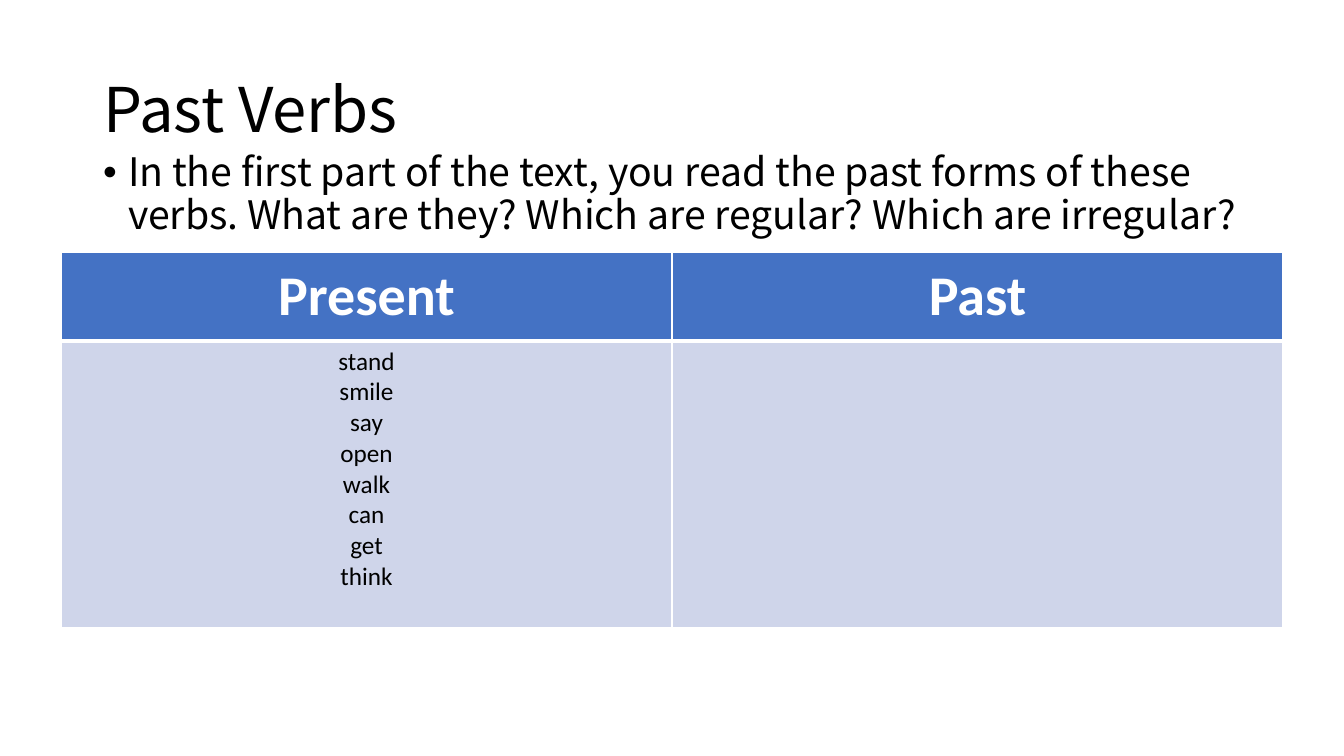
from dataclasses import dataclass

from lxml.etree import SubElement
from pptx import Presentation
from pptx.dml.color import RGBColor
from pptx.enum.text import MSO_ANCHOR, MSO_AUTO_SIZE, PP_ALIGN
from pptx.oxml.ns import qn
from pptx.util import Emu, Pt

TITLE = "Past Verbs"
QUESTION = (
    "In the first part of the text, you read the past forms of these verbs. "
    "What are they? Which are regular? Which are irregular?"
)
COLUMNS = [
    ("Present", ["stand", "smile", "say", "open", "walk", "can", "get", "think"]),
    ("Past", []),
]

PAGE_SIZE = (1344, 756)
TITLE_AREA = (93, 40, 1159, 146)
BODY_AREA = (93, 148, 1191, 480)
TABLE_CORNER = (61, 252)
COLUMN_WIDTH = 611
ROW_HEIGHTS = (89, 287)
BULLET_INDENT = 25


@dataclass(frozen=True)
class Theme:
    text_font: str = "Noto Sans CJK SC"
    table_font: str = "Calibri"
    ink: str = "000000"
    white: str = "FFFFFF"
    header_fill: str = "4472C4"
    body_fill: str = "CFD5EA"
    title_size: int = 44
    question_size: int = 28
    header_size: int = 40
    verb_size: int = 18
    line_spacing: float = 0.9
    thin: int = 1
    thick: int = 3


THEME = Theme()


def px(length):
    return Emu(round(length * 914400 / 100.8))


def add_span(para, text, font, size, color, bold=False):
    span = para.add_run()
    span.text = text
    span.font.name = font
    span.font.size = Pt(size)
    span.font.bold = bold
    span.font.color.rgb = RGBColor.from_string(color)


def fill_placeholder(box, area, text, size, anchor):
    box.left, box.top, box.width, box.height = map(px, area)
    frame = box.text_frame
    frame.word_wrap = True
    frame.auto_size = MSO_AUTO_SIZE.NONE
    frame.vertical_anchor = anchor
    para = frame.paragraphs[0]
    para.alignment = PP_ALIGN.LEFT
    para.line_spacing = THEME.line_spacing
    para.space_before = Pt(0)
    add_span(para, text, THEME.text_font, size, THEME.ink)
    return para


def add_bullet(para):
    properties = para._p.get_or_add_pPr()
    properties.set("marL", str(px(BULLET_INDENT)))
    properties.set("indent", str(-px(BULLET_INDENT)))
    SubElement(properties, qn("a:buChar"), char="•")


def style_cell(cell, fill, top, bottom):
    properties = cell._tc.get_or_add_tcPr()
    widths = {"lnL": THEME.thin, "lnR": THEME.thin, "lnT": top, "lnB": bottom}
    for side, width in widths.items():
        line = SubElement(properties, qn(f"a:{side}"), w=str(Pt(width)))
        paint = SubElement(line, qn("a:solidFill"))
        SubElement(paint, qn("a:srgbClr"), val=THEME.white)
    cell.fill.solid()
    cell.fill.fore_color.rgb = RGBColor.from_string(fill)


def fill_cell(cell, lines, size, color, bold):
    frame = cell.text_frame
    for number, text in enumerate(lines):
        para = frame.add_paragraph() if number else frame.paragraphs[0]
        para.alignment = PP_ALIGN.CENTER
        add_span(para, text, THEME.table_font, size, color, bold)


def add_verb_table(page):
    left, top = TABLE_CORNER
    area = (left, top, COLUMN_WIDTH * len(COLUMNS), sum(ROW_HEIGHTS))
    table = page.shapes.add_table(len(ROW_HEIGHTS), len(COLUMNS), *map(px, area)).table
    for row, height in zip(table.rows, ROW_HEIGHTS):
        row.height = px(height)
    for index, (heading, verbs) in enumerate(COLUMNS):
        table.columns[index].width = px(COLUMN_WIDTH)
        header, body = table.cell(0, index), table.cell(1, index)
        style_cell(header, THEME.header_fill, THEME.thin, THEME.thick)
        style_cell(body, THEME.body_fill, THEME.thick, THEME.thin)
        header.vertical_anchor = MSO_ANCHOR.MIDDLE
        fill_cell(header, [heading], THEME.header_size, THEME.white, True)
        fill_cell(body, verbs, THEME.verb_size, THEME.ink, False)


def main():
    deck = Presentation()
    deck.slide_width, deck.slide_height = map(px, PAGE_SIZE)
    page = deck.slides.add_slide(deck.slide_layouts[1])
    title, body = page.placeholders
    fill_placeholder(title, TITLE_AREA, TITLE, THEME.title_size, MSO_ANCHOR.MIDDLE)
    question = fill_placeholder(
        body, BODY_AREA, QUESTION, THEME.question_size, MSO_ANCHOR.TOP
    )
    add_bullet(question)
    add_verb_table(page)
    deck.save("out.pptx")


if __name__ == "__main__":
    main()
